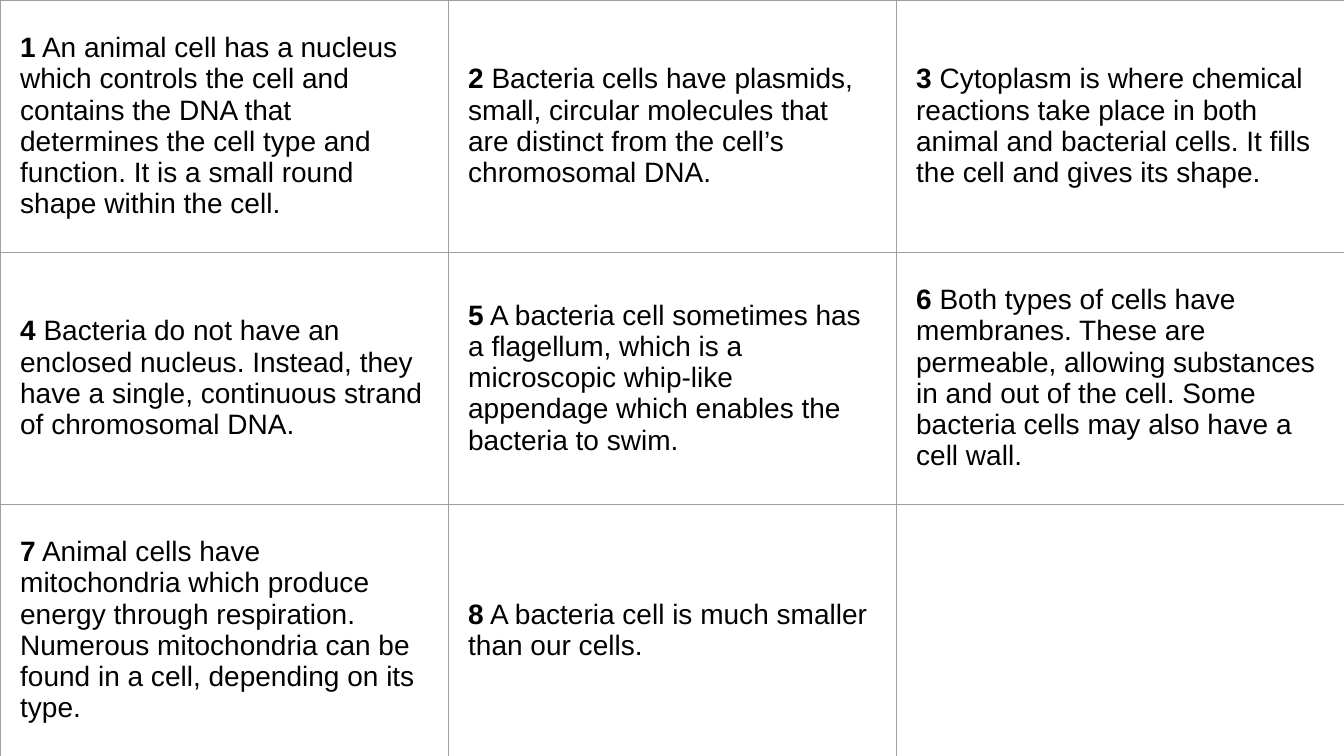
from lxml.etree import SubElement as Sub
from pptx import Presentation as Deck
from pptx.dml.color import RGBColor as RGB
from pptx.enum.text import MSO_ANCHOR as Anchor
from pptx.oxml.ns import qn
from pptx.util import Inches, Pt

INK = RGB(0x00, 0x00, 0x00)
GREY = RGB(0x9E, 0x9E, 0x9E)
WIDE, HIGH = Inches(13.33), Inches(7.5)
COLS = ROWS = 3
PAD = Inches(0.2)
FONT = {"name": "Arial", "size": Pt(20)}
CELL = {
    "vertical_anchor": Anchor.MIDDLE,
    "margin_left": PAD,
    "margin_right": PAD,
    "margin_top": PAD,
    "margin_bottom": PAD,
}
FACTS = [
    "An animal cell has a nucleus which controls the cell and contains the DNA that "
    "determines the cell type and function. It is a small round shape within the cell.",
    "Bacteria cells have plasmids, small, circular molecules that are distinct from "
    "the cell’s chromosomal DNA.",
    "Cytoplasm is where chemical reactions take place in both animal and bacterial "
    "cells. It fills the cell and gives its shape.",
    "Bacteria do not have an enclosed nucleus. Instead, they have a single, "
    "continuous strand of chromosomal DNA.",
    "A bacteria cell sometimes has a flagellum, which is a microscopic whip-like "
    "appendage which enables the bacteria to swim.",
    "Both types of cells have membranes. These are permeable, allowing substances in "
    "and out of the cell. Some bacteria cells may also have a cell wall.",
    "Animal cells have mitochondria which produce energy through respiration. "
    "Numerous mitochondria can be found in a cell, depending on its type.",
    "A bacteria cell is much smaller than our cells.",
]


def apply(item, style):
    for key, value in style.items():
        setattr(item, key, value)


def add_edges(cell):
    props = cell._tc.get_or_add_tcPr()
    for side in ("lnL", "lnR", "lnT", "lnB"):
        line = Sub(props, qn(f"a:{side}"), w=str(Pt(0.5)))
        fill = Sub(line, qn("a:solidFill"))
        Sub(fill, qn("a:srgbClr"), val=str(GREY))


def add_run(para, text, bold):
    run = para.add_run()
    run.text = text
    apply(run.font, FONT | {"bold": bold})
    run.font.color.rgb = INK


def add_fact(cell, num, fact):
    para = cell.text_frame.paragraphs[0]
    add_run(para, str(num), True)
    add_run(para, f" {fact}", False)


def add_grid(slide):
    table = slide.shapes.add_table(ROWS, COLS, 0, 0, WIDE, HIGH).table
    apply(table, {"first_row": False, "horz_banding": False})
    cells = list(table.iter_cells())
    for cell in cells:
        apply(cell, CELL)
        add_edges(cell)
        cell.fill.background()
    for num, (cell, fact) in enumerate(zip(cells, FACTS), 1):
        add_fact(cell, num, fact)


def main():
    deck = Deck()
    apply(deck, {"slide_width": WIDE, "slide_height": HIGH})
    slide = deck.slides.add_slide(deck.slide_layouts[6])
    add_grid(slide)
    deck.save("out.pptx")


if __name__ == "__main__":
    main()
